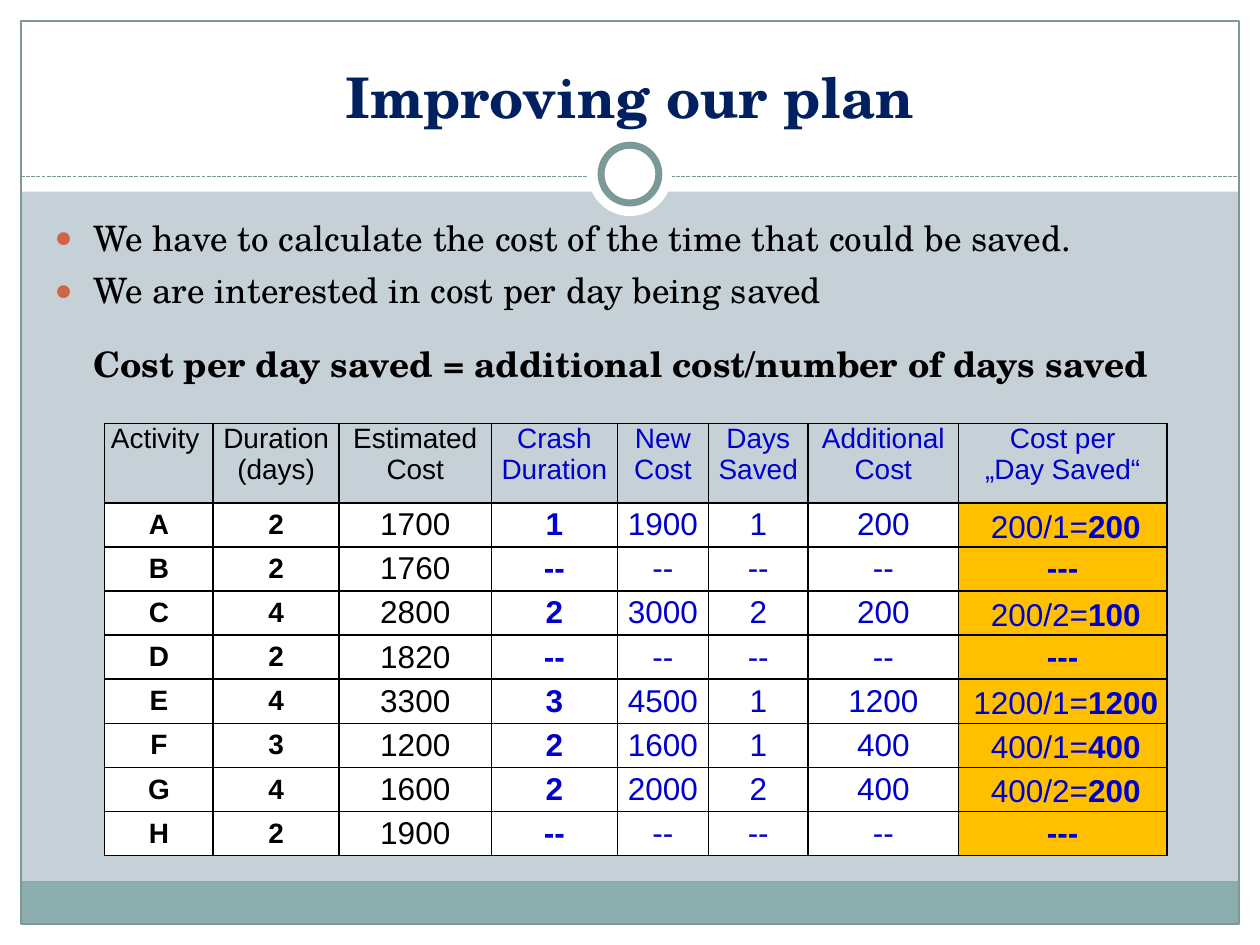
from lxml import etree
from pptx import Presentation
from pptx.dml.color import RGBColor
from pptx.enum.dml import MSO_LINE
from pptx.enum.shapes import MSO_CONNECTOR, MSO_SHAPE
from pptx.enum.text import MSO_ANCHOR, MSO_AUTO_SIZE, PP_ALIGN
from pptx.oxml.ns import qn
from pptx.util import Pt

RECTANGLE, OVAL = MSO_SHAPE.RECTANGLE, MSO_SHAPE.OVAL
STRAIGHT, DASHED = MSO_CONNECTOR.STRAIGHT, MSO_LINE.SQUARE_DOT
TOP, MIDDLE, BOTTOM = MSO_ANCHOR.TOP, MSO_ANCHOR.MIDDLE, MSO_ANCHOR.BOTTOM
LEFT, CENTER, JUSTIFY = PP_ALIGN.LEFT, PP_ALIGN.CENTER, PP_ALIGN.JUSTIFY
NO_AUTOFIT = MSO_AUTO_SIZE.NONE

WHITE = RGBColor(0xFF, 0xFF, 0xFF)
BLACK = RGBColor(0, 0, 0)
BACKGROUND = RGBColor(0xC5, 0xD1, 0xD7)
TEAL = RGBColor(0x8C, 0xAD, 0xAE)
FRAME = RGBColor(0x7C, 0x99, 0x9A)
NAVY = RGBColor(0x00, 0x20, 0x60)
BLUE = RGBColor(0x00, 0x00, 0xCC)
ORANGE = RGBColor(0xFF, 0xC0, 0x00)
BULLET = RGBColor(0xD1, 0x63, 0x49)

SERIF, SANS = "TeX Gyre Schola", "Arial"
TABLE_LEFT, TABLE_TOP, HEADER_HEIGHT, ROW_HEIGHT = 59.8, 241.9, 45.4, 25.2
COLUMN_WIDTHS = [62, 72, 87, 72, 52, 57, 86, 119]
COLUMN_STYLES = [
    (16, BLACK, True), (16, BLACK, True), (18, BLACK, False), (18, BLUE, True),
    (18, BLUE, False), (18, BLUE, False), (18, BLUE, False), (18, BLUE, True),
]
HEADERS = [
    ["Activity"], ["Duration", "(days)"], ["Estimated", "Cost"],
    ["Crash", "Duration"], ["New", "Cost"], ["Days", "Saved"],
    ["Additional", "Cost"], ["Cost per", "„Day Saved“"],
]
ACTIVITIES = [
    ["A", "2", "1700", "1", "1900", "1", "200", ""],
    ["B", "2", "1760", "--", "--", "--", "--", "---"],
    ["C", "4", "2800", "2", "3000", "2", "200", ""],
    ["D", "2", "1820", "--", "--", "--", "--", "---"],
    ["E", "4", "3300", "3", "4500", "1", "1200", ""],
    ["F", "3", "1200", "2", "1600", "1", "400", ""],
    ["G", "4", "1600", "2", "2000", "2", "400", ""],
    ["H", "2", "1900", "--", "--", "--", "--", "---"],
]
DAILY_COSTS = {
    0: ("200/1=", "200"), 2: ("200/2=", "100"), 4: ("1200/1=", "1200"),
    5: ("400/1=", "400"), 6: ("400/2=", "200"),
}
FORMULA_CENTER = 609


class SlideBuilder:
    """Hold the slide and draw its elements in one style."""

    def __init__(self, slide):
        self.slide = slide
        slide.background.fill.solid()
        slide.background.fill.fore_color.rgb = BACKGROUND

    def shape(self, kind, left, top, width, height, fill=None, line=None, weight=0.75):
        shape = self.slide.shapes.add_shape(kind, Pt(left), Pt(top), Pt(width), Pt(height))
        shape.shadow.inherit = False
        for color, target in ((fill, shape.fill), (line, shape.line.fill)):
            if color is None:
                target.background()
            else:
                target.solid()
                target.fore_color.rgb = color
        if line is not None:
            shape.line.width = Pt(weight)

    def dashed_line(self, left, right, y):
        line = self.slide.shapes.add_connector(STRAIGHT, Pt(left), Pt(y), Pt(right), Pt(y))
        line.line.color.rgb = FRAME
        line.line.width = Pt(0.75)
        line.line.dash_style = DASHED
        etree.SubElement(line._element.spPr, qn("a:effectLst"))

    def run(self, paragraph, text, font, size, color, bold=False):
        run = paragraph.add_run()
        run.text = text
        run.font.name = font
        run.font.size = Pt(size)
        run.font.color.rgb = color
        run.font.bold = bold

    def paragraph(self, frame, index, alignment):
        paragraph = frame.add_paragraph() if index else frame.paragraphs[0]
        paragraph.alignment = alignment
        return paragraph

    def placeholder(self, shape, left, top, width, height, anchor):
        shape.left, shape.top = Pt(left), Pt(top)
        shape.width, shape.height = Pt(width), Pt(height)
        shape.text_frame.auto_size = NO_AUTOFIT
        shape.text_frame.vertical_anchor = anchor
        self.slide.shapes._spTree.append(shape._element)
        return shape.text_frame

    def title(self, text):
        frame = self.placeholder(self.slide.shapes.title, 24, 18, 672, 60, BOTTOM)
        self.run(self.paragraph(frame, 0, CENTER), text, SERIF, 32, NAVY, True)

    def body(self, bullets, conclusion):
        frame = self.placeholder(self.slide.placeholders[1], 24, 120, 672, 360, TOP)
        for index, text in enumerate(bullets + [conclusion]):
            is_bullet = index < len(bullets)
            paragraph = self.paragraph(frame, index, LEFT)
            paragraph.space_before = Pt(0 if is_bullet else 12)
            paragraph.space_after = Pt(6 if is_bullet else 12)
            self.run(paragraph, text, SERIF, 20, BLACK, not is_bullet)
            properties = paragraph._p.get_or_add_pPr()
            properties.set("marL", str(Pt(22)))
            properties.set("indent", str(Pt(-22 if is_bullet else 0)))
            if is_bullet:
                color = etree.SubElement(properties, qn("a:buClr"))
                etree.SubElement(color, qn("a:srgbClr"), val=str(BULLET))
                etree.SubElement(properties, qn("a:buSzPct"), val="85000")
                etree.SubElement(properties, qn("a:buChar"), char="●")
            else:
                etree.SubElement(properties, qn("a:buNone"))

    def cell(self, cell, lines, size, color, bold, fill, anchor, alignment):
        cell.margin_left = cell.margin_right = Pt(3.6)
        cell.margin_top = cell.margin_bottom = 0
        cell.vertical_anchor = anchor
        properties = cell._tc.get_or_add_tcPr()
        for side in ("lnL", "lnR", "lnT", "lnB"):
            border = etree.SubElement(properties, qn(f"a:{side}"), w=str(Pt(1)))
            solid = etree.SubElement(border, qn("a:solidFill"))
            etree.SubElement(solid, qn("a:srgbClr"), val=str(BLACK))
        if fill is None:
            cell.fill.background()
        else:
            cell.fill.solid()
            cell.fill.fore_color.rgb = fill
        for index, text in enumerate(lines):
            paragraph = self.paragraph(cell.text_frame, index, alignment)
            if text:
                self.run(paragraph, text, SANS, size, color, bold)

    def table(self):
        height = HEADER_HEIGHT + ROW_HEIGHT * len(ACTIVITIES)
        table = self.slide.shapes.add_table(
            len(ACTIVITIES) + 1, len(HEADERS), Pt(TABLE_LEFT), Pt(TABLE_TOP),
            Pt(sum(COLUMN_WIDTHS)), Pt(height)).table
        table.first_row = table.horz_banding = False
        for index, row in enumerate(table.rows):
            row.height = Pt(ROW_HEIGHT if index else HEADER_HEIGHT)
        for column, (width, style) in enumerate(zip(COLUMN_WIDTHS, COLUMN_STYLES)):
            table.columns[column].width = Pt(width)
            size, color, bold = style
            self.cell(table.cell(0, column), HEADERS[column], 16, color, False,
                      None, TOP, CENTER if column else JUSTIFY)
            fill = ORANGE if column == len(HEADERS) - 1 else WHITE
            for row, values in enumerate(ACTIVITIES, 1):
                self.cell(table.cell(row, column), [values[column]], size, color, bold,
                          fill, MIDDLE, CENTER)

    def formula(self, row, calculation, result):
        width = 121 if len(result) > 3 else 101
        top = TABLE_TOP + HEADER_HEIGHT + row * ROW_HEIGHT - 1.4
        box = self.slide.shapes.add_textbox(
            Pt(FORMULA_CENTER - width / 2), Pt(top), Pt(width), Pt(51))
        box.text_frame.word_wrap = False
        paragraph = self.paragraph(box.text_frame, 0, CENTER)
        self.run(paragraph, calculation, SANS, 18, BLUE)
        self.run(paragraph, result, SANS, 18, BLUE, True)


def main():
    presentation = Presentation()
    presentation.slide_width, presentation.slide_height = Pt(720), Pt(540)
    builder = SlideBuilder(presentation.slides.add_slide(presentation.slide_layouts[1]))
    for margin in ((0, 528, 720, 12), (0, 0, 720, 109.5), (0, 0, 12, 540), (708, 0, 12, 540)):
        builder.shape(RECTANGLE, *margin, fill=WHITE)
    builder.shape(RECTANGLE, 12, 503.5, 696, 24.5, fill=TEAL)
    builder.shape(RECTANGLE, 12, 12, 696, 516, line=FRAME)
    builder.dashed_line(12, 708, 100.8)
    builder.shape(OVAL, 336, 75.5, 48, 48, fill=WHITE)
    builder.shape(OVAL, 343.5, 83, 33, 33, fill=WHITE, line=FRAME, weight=4)
    builder.title("Improving our plan")
    builder.body(
        ["We have to calculate the cost of the time that could be saved.",
         "We are interested in cost per day being saved"],
        "Cost per day saved = additional cost/number of days saved")
    builder.table()
    for row, (calculation, result) in DAILY_COSTS.items():
        builder.formula(row, calculation, result)
    presentation.save("out.pptx")


if __name__ == "__main__":
    main()
